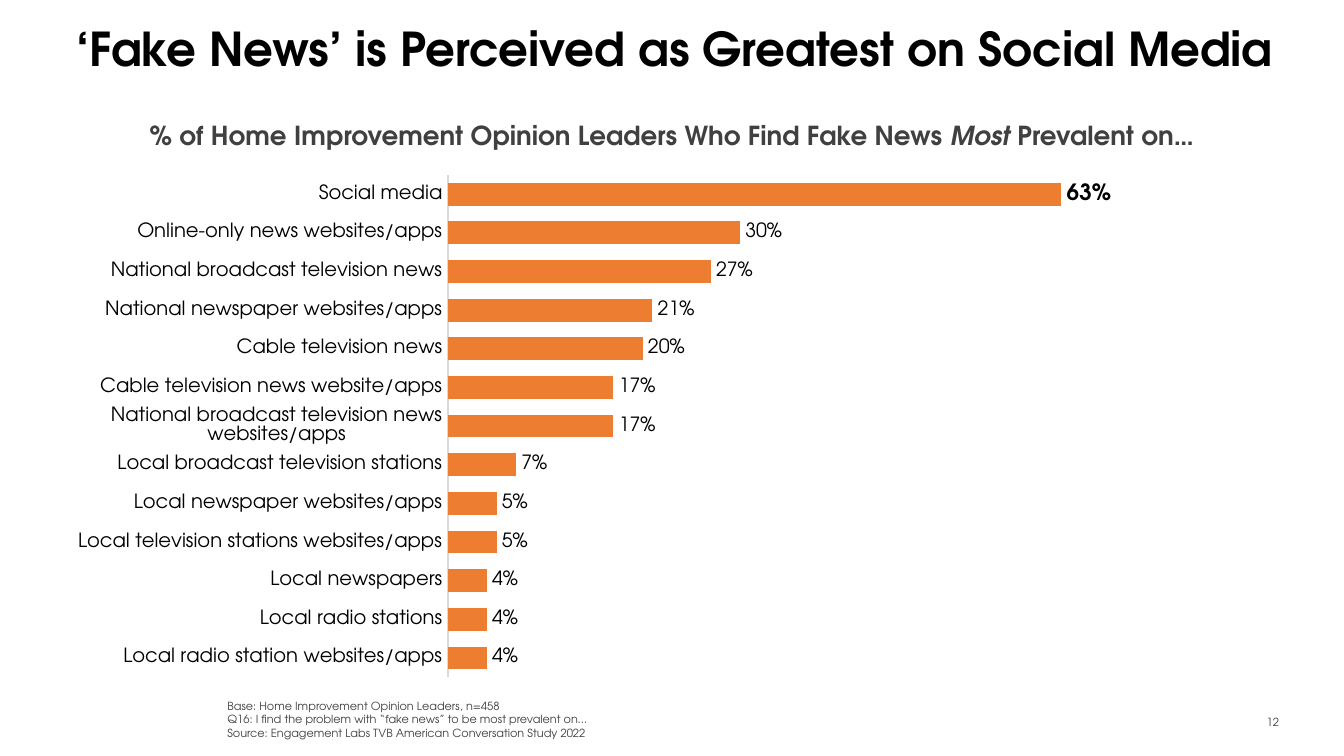
from dataclasses import dataclass

from lxml import etree
from pptx import Presentation
from pptx import util as u
from pptx.chart import data as cd
from pptx.dml.color import RGBColor
from pptx.enum import chart as ch
from pptx.enum import text as tx
from pptx.oxml import ns

SCALE = 9525  # EMU in one px, 96 px to the inch


@dataclass(frozen=True)
class Theme:
    font: str = "TeX Gyre Adventor"
    black: str = "000000"
    gray: str = "404040"
    dark: str = "3C3C3A"
    rule: str = "D9D9D9"
    bar: str = "ED7D31"
    title: float = 25
    head: float = 14
    label: float = 10.5
    strong: float = 12
    note: float = 6


THEME = Theme()

NEWS = [
    ("Social media", 0.63),
    ("Online-only news websites/apps", 0.30),
    ("National broadcast television news", 0.27),
    ("National newspaper websites/apps", 0.21),
    ("Cable television news", 0.20),
    ("Cable television news website/apps", 0.17),
    ("National broadcast television news websites/apps", 0.17),
    ("Local broadcast television stations", 0.07),
    ("Local newspaper websites/apps", 0.05),
    ("Local television stations websites/apps", 0.05),
    ("Local newspapers", 0.04),
    ("Local radio stations", 0.04),
    ("Local radio station websites/apps", 0.04),
]
NOTES = [
    "Base: Home Improvement Opinion Leaders, n=458",
    "Q16: I find the problem with “fake news” to be most prevalent on…",
    "Source: Engagement Labs TVB American Conversation Study 2022",
]


def px(*nums):
    return [u.Emu(n * SCALE) for n in nums]


def style(font, size, color, bold=False):
    font.name = THEME.font
    font.size = u.Pt(size)
    font.bold = bold
    font.color.rgb = RGBColor.from_string(color)


def write(slide, box, lines, size, color, bold=False, align="LEFT",
          anchor="TOP", top=5, wrap=True):
    """Add a text box; each line is a list of runs."""
    frame = slide.shapes.add_textbox(*px(*box)).text_frame
    frame.word_wrap = wrap
    frame.margin_top = px(top)[0]
    frame.vertical_anchor = getattr(tx.MSO_ANCHOR, anchor)
    frame.text = "\n".join("" for _ in lines)
    for para, runs in zip(frame.paragraphs, lines):
        para.alignment = getattr(tx.PP_ALIGN, align)
        for words in runs:
            run = para.add_run()
            run.text = words
            style(run.font, size, color, bold)
    return frame


def title(slide, box):
    write(slide, box, [["‘Fake News’ is Perceived as Greatest on Social Media"]],
          THEME.title, THEME.black, bold=True, top=0)


def heading(slide, box):
    runs = ["% of Home Improvement Opinion Leaders Who Find Fake News ",
            "Most", " Prevalent on…"]
    frame = write(slide, box, [runs], THEME.head, THEME.gray, bold=True,
                  align="CENTER", wrap=False)
    frame.paragraphs[0].runs[1].font.italic = True


def footer(slide, box):
    write(slide, box, [[note] for note in NOTES], THEME.note, THEME.gray,
          anchor="BOTTOM")


def number(slide, box):
    write(slide, box, [["12"]], THEME.note, THEME.dark, align="RIGHT",
          anchor="MIDDLE")


def fix_plot(chart, box, inner):
    """Set the plot area, given in px relative to the chart box."""
    area = chart._chartSpace.chart.plotArea
    for old in area.findall(ns.qn("c:layout")):
        area.remove(old)
    layout = etree.Element(ns.qn("c:layout"))
    area.insert(0, layout)
    manual = etree.SubElement(layout, ns.qn("c:manualLayout"))
    items = {"layoutTarget": "inner", "xMode": "edge", "yMode": "edge"}
    for name, part, whole in zip("xywh", inner, box[2:] * 2):
        items[name] = part / whole
    for name, value in items.items():
        etree.SubElement(manual, ns.qn("c:" + name)).set("val", str(value))


def bars(slide, box):
    data = cd.CategoryChartData(number_format="#,##0%")
    data.categories = [name for name, _ in NEWS]
    data.add_series("Series 1", [share for _, share in NEWS])
    chart = slide.shapes.add_chart(
        ch.XL_CHART_TYPE.BAR_CLUSTERED, *px(*box), data).chart
    chart.has_legend = False
    chart.has_title = False
    style(chart.font, THEME.label, THEME.black)
    fix_plot(chart, box, (271, 14, 487, 359))

    cat = chart.category_axis
    cat.reverse_order = True
    cat.major_tick_mark = ch.XL_TICK_MARK.NONE
    cat.format.line.color.rgb = RGBColor.from_string(THEME.rule)
    cat.format.line.width = u.Pt(0.75)
    style(cat.tick_labels.font, THEME.label, THEME.black)

    val = chart.value_axis
    val.minimum_scale, val.maximum_scale = 0, 0.7
    val.has_major_gridlines = False
    val.visible = False

    plot = chart.plots[0]
    plot.gap_width = 70
    plot.vary_by_categories = False
    series = plot.series[0]
    series.format.fill.solid()
    series.format.fill.fore_color.rgb = RGBColor.from_string(THEME.bar)
    labels = series.data_labels
    labels.show_value = True
    labels.number_format = "#,##0%"
    labels.number_format_is_linked = False
    labels.position = ch.XL_LABEL_POSITION.OUTSIDE_END
    style(labels.font, THEME.label, THEME.black)
    first = series.points[0].data_label
    style(first.font, THEME.strong, THEME.black, bold=True)
    first.position = ch.XL_LABEL_POSITION.OUTSIDE_END


def main():
    deck = Presentation()
    deck.slide_width, deck.slide_height = px(960, 540)
    slide = deck.slides.add_slide(deck.slide_layouts[6])
    number(slide, (868, 501, 55, 29))
    bars(slide, (49, 111, 871, 387))
    title(slide, (45, 14, 882, 65))
    footer(slide, (153, 495, 723, 38))
    heading(slide, (90, 80, 780, 33))
    deck.save("out.pptx")


if __name__ == "__main__":
    main()
